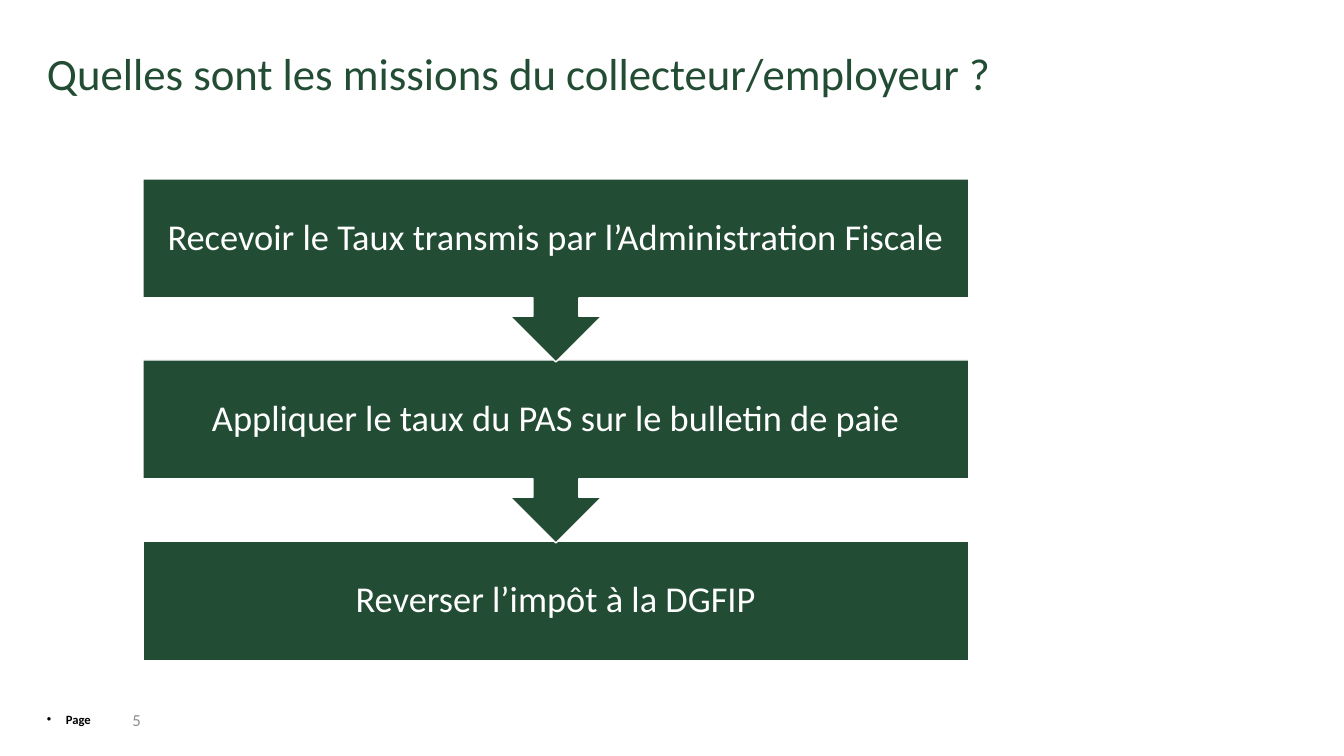
"""Build a slide listing the collector's missions as a chain of callouts."""
from lxml.etree import SubElement
from pptx import Presentation
from pptx.dml.color import RGBColor
from pptx.enum.shapes import MSO_SHAPE
from pptx.enum.text import MSO_ANCHOR, MSO_AUTO_SIZE, PP_ALIGN
from pptx.oxml.ns import qn
from pptx.util import Pt

TITLE = "Quelles sont les missions du collecteur/employeur ?"
MISSIONS = [
    "Recevoir le Taux transmis par l’Administration Fiscale",
    "Appliquer le taux du PAS sur le bulletin de paie",
    "Reverser l’impôt à la DGFIP",
]
PAGE_LABEL = "Page"
PAGE_NUMBER = "5"

COLORS = {"green": "224C33", "white": "FFFFFF", "black": "000000", "grey": "8C8C8C"}
FONT = "Calibri"
STEP_LEFT, STEP_TOP, STEP_WIDTH = 143, 179, 826
STEP_PITCH, BOX_HEIGHT, CALLOUT_HEIGHT = 181, 120, 183


def px(length):
    """Turn pixels into EMU."""
    return round(length * 914400 / 100.8)


def color(name):
    """Return a named colour."""
    return RGBColor.from_string(COLORS[name])


def write(box, text, size, ink, align=PP_ALIGN.LEFT, anchor=MSO_ANCHOR.MIDDLE,
          bold=False, spacing=1.0, insets=(10, 5, 10, 5), bullet_indent=0):
    """Write one formatted paragraph into a box."""
    frame = box.text_frame
    frame.word_wrap = True
    frame.auto_size = MSO_AUTO_SIZE.NONE
    frame.vertical_anchor = anchor
    frame.margin_left, frame.margin_top, frame.margin_right, frame.margin_bottom = map(px, insets)
    para = frame.paragraphs[0]
    para.alignment = align
    para.line_spacing = spacing
    if bullet_indent:
        properties = para._p.get_or_add_pPr()
        properties.set("marL", str(px(bullet_indent)))
        properties.set("indent", str(-px(bullet_indent)))
        SubElement(properties, qn("a:buFont"), typeface="Arial")
        SubElement(properties, qn("a:buChar"), char="•")
    span = para.add_run()
    span.text = text
    span.font.name = FONT
    span.font.size = Pt(size)
    span.font.bold = bold
    span.font.color.rgb = color(ink)


def add_step(slide, index, text):
    """Add a mission box, with an arrow down unless it is the last."""
    last = index == len(MISSIONS) - 1
    preset = MSO_SHAPE.RECTANGLE if last else MSO_SHAPE.DOWN_ARROW_CALLOUT
    height = BOX_HEIGHT if last else CALLOUT_HEIGHT
    step = slide.shapes.add_shape(preset, px(STEP_LEFT), px(STEP_TOP + index * STEP_PITCH),
                                  px(STEP_WIDTH), px(height))
    step.shadow.inherit = False
    step.fill.solid()
    step.fill.fore_color.rgb = color("green")
    step.line.color.rgb = color("white")
    step.line.width = Pt(1)
    write(step, text, 26, "white", align=PP_ALIGN.CENTER, spacing=0.9, insets=(20, 20, 20, 20))


def main():
    """Build and save the deck."""
    deck = Presentation()
    deck.slide_width, deck.slide_height = px(1344), px(756)
    slide = deck.slides.add_slide(deck.slide_layouts[5])

    label = slide.shapes.add_textbox(px(37), px(707), px(64), px(25))
    write(label, PAGE_LABEL, 9, "black", anchor=MSO_ANCHOR.TOP, bold=True,
          insets=(10, 5, 0, 5), bullet_indent=19)

    title = slide.shapes.title
    title.left, title.top, title.width, title.height = map(px, (37, 21, 1059, 111))
    write(title, TITLE, 32, "green", spacing=0.9)

    number = slide.shapes.add_textbox(px(92), px(707), px(59), px(25))
    write(number, PAGE_NUMBER, 12, "grey", align=PP_ALIGN.RIGHT)

    for index, mission in reversed(list(enumerate(MISSIONS))):
        add_step(slide, index, mission)

    deck.save("out.pptx")


if __name__ == "__main__":
    main()
